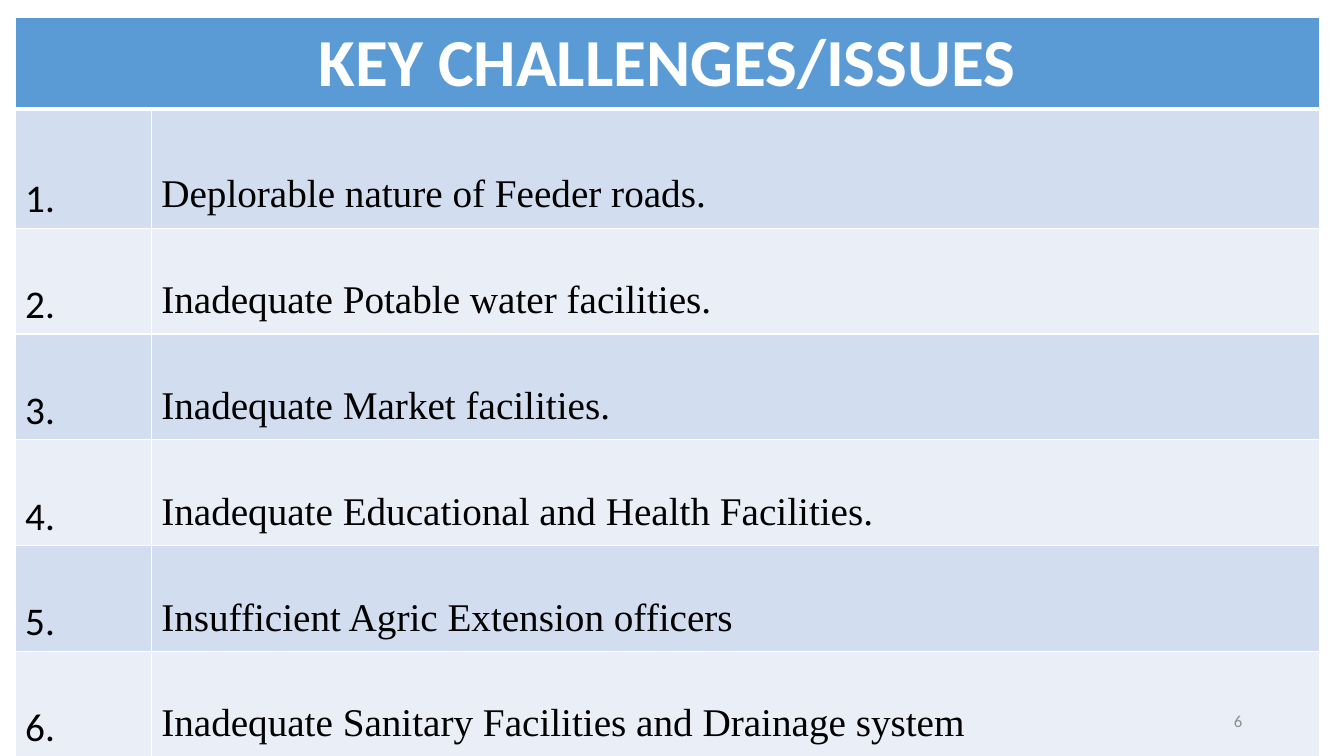
"""Builds the key challenges slide."""
from lxml import etree
from pptx import Presentation, util as u
from pptx.dml.color import RGBColor
from pptx.enum import text
from pptx.oxml import ns

WHITE = RGBColor(0xFF, 0xFF, 0xFF)
BLACK = RGBColor(0, 0, 0)
GREY = RGBColor(0x8C, 0x8C, 0x8C)
HEADER = RGBColor(0x5B, 0x9B, 0xD5)
BANDS = [RGBColor(0xD2, 0xDE, 0xEF), RGBColor(0xEA, 0xEF, 0xF7)]
SANS, SERIF = "Calibri", "Times New Roman"
LEFT, CENTER, RIGHT = (text.PP_ALIGN.LEFT, text.PP_ALIGN.CENTER,
                       text.PP_ALIGN.RIGHT)
CHALLENGES = [
    "Deplorable nature of Feeder roads.",
    "Inadequate Potable water facilities.",
    "Inadequate Market facilities.",
    "Inadequate Educational and Health Facilities.",
    "Insufficient Agric Extension officers",
    "Inadequate Sanitary Facilities and Drainage system",
]


class Deck:
    def __init__(self, prs):
        self.s = prs.slides.add_slide(prs.slide_layouts[6])

    def add_text(self, tf, words, size, font, color, align=LEFT, bold=False):
        p = tf.paragraphs[0]
        p.alignment = align
        r = p.add_run()
        r.text = words
        r.font.size, r.font.name, r.font.bold = u.Pt(size), font, bold
        r.font.color.rgb = color

    def borders(self, cell, **widths):
        tc_pr = cell._tc.get_or_add_tcPr()
        for side in "LRTB":
            ln = etree.SubElement(tc_pr, ns.qn(f"a:ln{side}"),
                                  w=str(u.Pt(widths.get(side, 1))))
            fill = etree.SubElement(ln, ns.qn("a:solidFill"))
            etree.SubElement(fill, ns.qn("a:srgbClr"), val=str(WHITE))

    def cell(self, cell, fill, anchor, bottom=0.05, **widths):
        self.borders(cell, **widths)
        cell.fill.solid()
        cell.fill.fore_color.rgb = fill
        cell.vertical_anchor = anchor
        cell.margin_bottom = u.Inches(bottom)
        return cell.text_frame

    def table(self, title, items, left, top, cols, rows):
        table = self.s.shapes.add_table(
            len(rows), len(cols), u.Inches(left), u.Inches(top),
            u.Inches(sum(cols)), u.Inches(sum(rows))).table
        for col, width in zip(table.columns, cols):
            col.width = u.Inches(width)
        for row, height in zip(table.rows, rows):
            row.height = u.Inches(height)
        head = table.cell(0, 0)
        head.merge(table.cell(0, 1))
        for col in range(2):
            self.cell(table.cell(0, col), HEADER, text.MSO_ANCHOR.TOP, B=3)
        self.add_text(head.text_frame, title, 48, SANS, WHITE, CENTER, True)
        for i, item in enumerate(items, 1):
            for col, (words, font, bottom) in enumerate(
                    [(f"{i}.", SANS, 0.05), (item, SERIF, 0.12)]):
                tf = self.cell(table.cell(i, col), BANDS[(i - 1) % 2],
                               text.MSO_ANCHOR.BOTTOM, bottom,
                               T=3 if i == 1 else 1)
                self.add_text(tf, words, 28, font, BLACK)

    def label(self, words, left, top, width, height):
        sp = self.s.shapes.add_textbox(*map(u.Inches, (left, top, width, height)))
        tf = sp.text_frame
        tf.word_wrap = True
        tf.vertical_anchor = text.MSO_ANCHOR.MIDDLE
        self.add_text(tf, words, 12, SANS, GREY, RIGHT)


def main():
    prs = Presentation()
    prs.slide_width, prs.slide_height = u.Inches(13.33), u.Inches(7.5)
    deck = Deck(prs)
    deck.table("KEY CHALLENGES/ISSUES", CHALLENGES, 0.15, 0.17,
               [1.35, 11.59], [0.91, 1.18] + [1.05] * 5)
    deck.label("6", 9.42, 6.95, 3, 0.4)
    prs.save("out.pptx")


if __name__ == "__main__":
    main()
